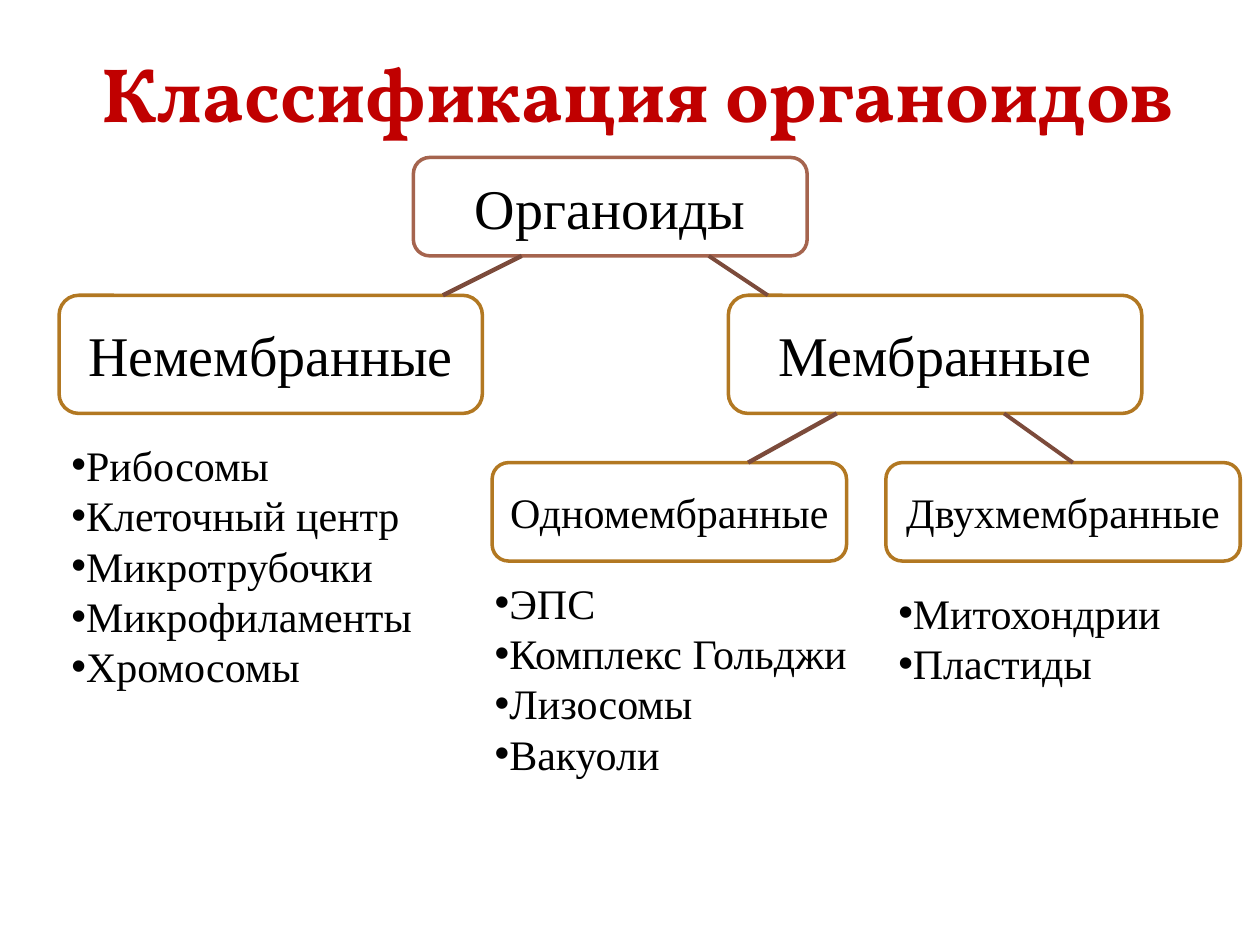
import pptx
import pptx.dml.color
import pptx.enum.shapes
import pptx.enum.text
import pptx.oxml.ns
import pptx.util
from lxml import etree

# Grid of square cells: 128 columns by 96 rows on a 10 x 7.5 inch slide
SLIDE_WIDTH, SLIDE_HEIGHT = pptx.util.Inches(10), pptx.util.Inches(7.5)
COLUMNS = 128
CELL = SLIDE_WIDTH / COLUMNS

COLORS = {
    "title": "C00000",
    "text": "000000",
    "box": "FFFFFF",
    "root": "A5644E",
    "group": "B27822",
    "branch": "7C4B3B",
}
BODY_FONT = "Times New Roman"
ALIGN = pptx.enum.text.PP_ALIGN
ANCHOR = pptx.enum.text.MSO_ANCHOR
SHAPES = pptx.enum.shapes

TITLE_FORMAT = {"name": "Vollkorn", "size": pptx.util.Pt(44), "bold": True}
LARGE_FORMAT = {"name": BODY_FONT, "size": pptx.util.Pt(32)}
SMALL_FORMAT = {"name": BODY_FONT, "size": pptx.util.Pt(24)}

# Caption, (column, row, columns wide, rows high), outline, text format
BOXES = [
    ("Органоиды", (42, 16, 40, 10), "root", LARGE_FORMAT),
    ("Немембранные", (6, 30, 43, 12), "group", LARGE_FORMAT),
    ("Мембранные", (74, 30, 42, 12), "group", LARGE_FORMAT),
    ("Одномембранные", (50, 47, 36, 10), "group", SMALL_FORMAT),
    ("Двухмембранные", (90, 47, 36, 10), "group", SMALL_FORMAT),
]

# Organelles of each group and the area of their list
ORGANELLES = [
    (["Рибосомы", "Клеточный центр", "Микротрубочки", "Микрофиламенты", "Хромосомы"],
     (6, 44, 40, 27)),
    (["ЭПС", "Комплекс Гольджи", "Лизосомы", "Вакуоли"], (49, 58, 40, 22)),
    (["Митохондрии", "Пластиды"], (90, 59, 36, 12)),
]

# Start and end (column, row), line width
BRANCHES = [
    ((53, 26), (45, 30), 2.5),
    ((72, 26), (78, 30), 2.25),
    ((85, 42), (76, 47), 2.5),
    ((102, 42), (109, 47), 2.25),
]


def cells(values):
    return [round(value * CELL) for value in values]


def color(name):
    return pptx.dml.color.RGBColor.from_string(COLORS[name])


def write(paragraph, text, font_format, color_name="text", align=ALIGN.LEFT):
    paragraph.alignment = align
    run = paragraph.add_run()
    run.text = text
    for attribute, value in font_format.items():
        setattr(run.font, attribute, value)
    run.font.color.rgb = color(color_name)


def set_title(slide, text, area):
    title = slide.shapes.title
    title.left, title.top, title.width, title.height = cells(area)
    frame = title.text_frame
    frame.auto_size = pptx.enum.text.MSO_AUTO_SIZE.NONE
    frame.vertical_anchor = ANCHOR.TOP
    write(frame.paragraphs[0], text, TITLE_FORMAT, "title")


def add_box(slide, caption, area, outline, font_format):
    box = slide.shapes.add_shape(SHAPES.MSO_SHAPE.ROUNDED_RECTANGLE, *cells(area))
    box.shadow.inherit = False
    box.fill.solid()
    box.fill.fore_color.rgb = color("box")
    box.line.color.rgb = color(outline)
    box.line.width = pptx.util.Pt(2)
    box.text_frame.word_wrap = True
    box.text_frame.vertical_anchor = ANCHOR.MIDDLE
    write(box.text_frame.paragraphs[0], caption, font_format, align=ALIGN.CENTER)


def add_bullet_list(slide, items, area):
    frame = slide.shapes.add_textbox(*cells(area)).text_frame
    frame.word_wrap = True
    for index, item in enumerate(items):
        paragraph = frame.add_paragraph() if index else frame.paragraphs[0]
        write(paragraph, item, SMALL_FORMAT)
        properties = paragraph._p.get_or_add_pPr()
        qn = pptx.oxml.ns.qn
        etree.SubElement(properties, qn("a:buFont"), typeface="Arial")
        etree.SubElement(properties, qn("a:buChar"), char="•")


def add_branch(slide, start, end, width):
    branch = slide.shapes.add_connector(
        SHAPES.MSO_CONNECTOR.STRAIGHT, *cells(start + end))
    branch.line.color.rgb = color("branch")
    branch.line.width = pptx.util.Pt(width)
    etree.SubElement(branch._element.spPr, pptx.oxml.ns.qn("a:effectLst"))


def main():
    presentation = pptx.Presentation()
    presentation.slide_width = SLIDE_WIDTH
    presentation.slide_height = SLIDE_HEIGHT
    title_only = presentation.slide_layouts[5]
    slide = presentation.slides.add_slide(title_only)

    set_title(slide, "Классификация органоидов", (9, 4, 113, 11))

    # Classification tree
    for box in BOXES:
        add_box(slide, *box)
    for branch in BRANCHES:
        add_branch(slide, *branch)

    # Members of each group
    for items, area in ORGANELLES:
        add_bullet_list(slide, items, area)

    presentation.save("out.pptx")


if __name__ == "__main__":
    main()
